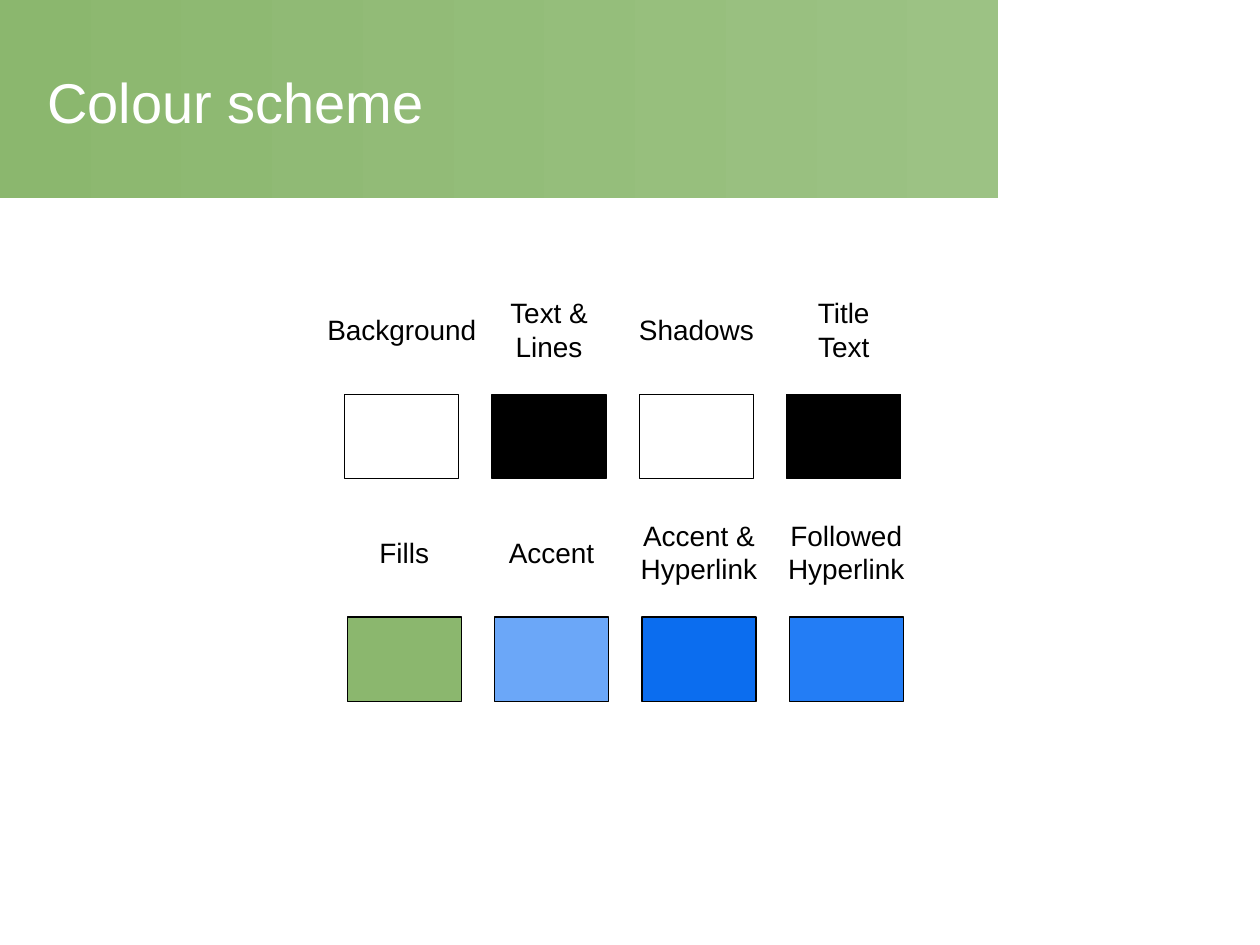
from dataclasses import dataclass

from pptx import Presentation
from pptx.dml.color import RGBColor
from pptx.enum.shapes import MSO_SHAPE
from pptx.enum.text import MSO_ANCHOR, MSO_AUTO_SIZE, PP_ALIGN
from pptx.util import Cm, Pt

RECTANGLE = MSO_SHAPE.RECTANGLE
MIDDLE = MSO_ANCHOR.MIDDLE
CENTER = PP_ALIGN.CENTER
GROW = MSO_AUTO_SIZE.SHAPE_TO_FIT_TEXT

WHITE = RGBColor(0xFF, 0xFF, 0xFF)
BLACK = RGBColor(0x00, 0x00, 0x00)
GREEN = RGBColor(0x8B, 0xB7, 0x6E)
PALE_GREEN = RGBColor(0x9C, 0xC2, 0x84)
LIGHT_BLUE = RGBColor(0x6B, 0xA7, 0xF8)
DEEP_BLUE = RGBColor(0x0B, 0x6D, 0xEF)
MID_BLUE = RGBColor(0x23, 0x7D, 0xF5)

FONT = "Arial"

# Swatch grid, in centimetres
SWATCH_WIDTH = 2.3
SWATCH_HEIGHT = 1.7
PITCH = 2.97
LABEL_RISE = 1.3  # from the middle of a label down to its swatch
LABEL_HEIGHTS = {1: 0.94, 2: 1.63}


@dataclass(frozen=True)
class Swatch:
    paragraphs: tuple[str, ...]  # "\n" marks a line break in a paragraph
    label_width: float
    colour: RGBColor


@dataclass(frozen=True)
class SwatchRow:
    left: float
    top: float
    swatches: tuple[Swatch, ...]


ROWS = (
    SwatchRow(6.95, 7.95, (
        Swatch(("Background",), 3.54, WHITE),
        Swatch(("Text &", "Lines"), 2.14, BLACK),
        Swatch(("Shadows",), 2.86, WHITE),
        Swatch(("Title\nText",), 1.62, BLACK),
    )),
    SwatchRow(7, 12.44, (
        Swatch(("Fills",), 1.52, GREEN),
        Swatch(("Accent",), 2.26, LIGHT_BLUE),
        Swatch(("Accent &", "Hyperlink"), 2.94, DEEP_BLUE),
        Swatch(("Followed", "Hyperlink"), 2.94, MID_BLUE),
    )),
)


def add_run(paragraph, text: str, size: float, colour: RGBColor) -> None:
    run = paragraph.add_run()
    run.text = text
    run.font.name = FONT
    run.font.size = Pt(size)
    run.font.color.rgb = colour


def add_header(slide) -> None:
    band = slide.shapes.add_shape(RECTANGLE, 0, 0, Cm(20.12), Cm(4))
    band.shadow.inherit = False
    band.line.fill.background()
    band.fill.gradient()
    band.fill.gradient_angle = 0
    for stop, colour in zip(band.fill.gradient_stops, (GREEN, PALE_GREEN)):
        stop.color.rgb = colour

    title = slide.shapes.add_textbox(Cm(0.7), Cm(0.76), Cm(19), Cm(2.57)).text_frame
    title.word_wrap = True
    title.vertical_anchor = MIDDLE
    add_run(title.paragraphs[0], "Colour scheme", 32, WHITE)


def add_label(slide, swatch: Swatch, centre: float, middle: float) -> None:
    line_count = sum(len(text.split("\n")) for text in swatch.paragraphs)
    height = LABEL_HEIGHTS[line_count]
    label = slide.shapes.add_textbox(
        Cm(centre - swatch.label_width / 2), Cm(middle - height / 2),
        Cm(swatch.label_width), Cm(height),
    ).text_frame
    label.word_wrap = False
    label.auto_size = GROW
    for index, text in enumerate(swatch.paragraphs):
        paragraph = label.add_paragraph() if index else label.paragraphs[0]
        paragraph.alignment = CENTER
        for line_index, line in enumerate(text.split("\n")):
            if line_index:
                paragraph.add_line_break()
            add_run(paragraph, line, 16, BLACK)


def add_swatch(slide, swatch: Swatch, left: float, top: float) -> None:
    box = slide.shapes.add_shape(
        RECTANGLE, Cm(left), Cm(top), Cm(SWATCH_WIDTH), Cm(SWATCH_HEIGHT))
    box.shadow.inherit = False
    box.fill.solid()
    box.fill.fore_color.rgb = swatch.colour
    box.line.color.rgb = BLACK
    box.line.width = Pt(0.75)
    add_label(slide, swatch, left + SWATCH_WIDTH / 2, top - LABEL_RISE)


def main() -> None:
    deck = Presentation()
    deck.slide_width, deck.slide_height = Cm(25.4), Cm(19.05)
    slide = deck.slides.add_slide(deck.slide_layouts[6])

    # Title band
    add_header(slide)

    # Labelled colour swatches
    for row in ROWS:
        for column, swatch in enumerate(row.swatches):
            add_swatch(slide, swatch, row.left + column * PITCH, row.top)

    deck.save("out.pptx")


if __name__ == "__main__":
    main()
